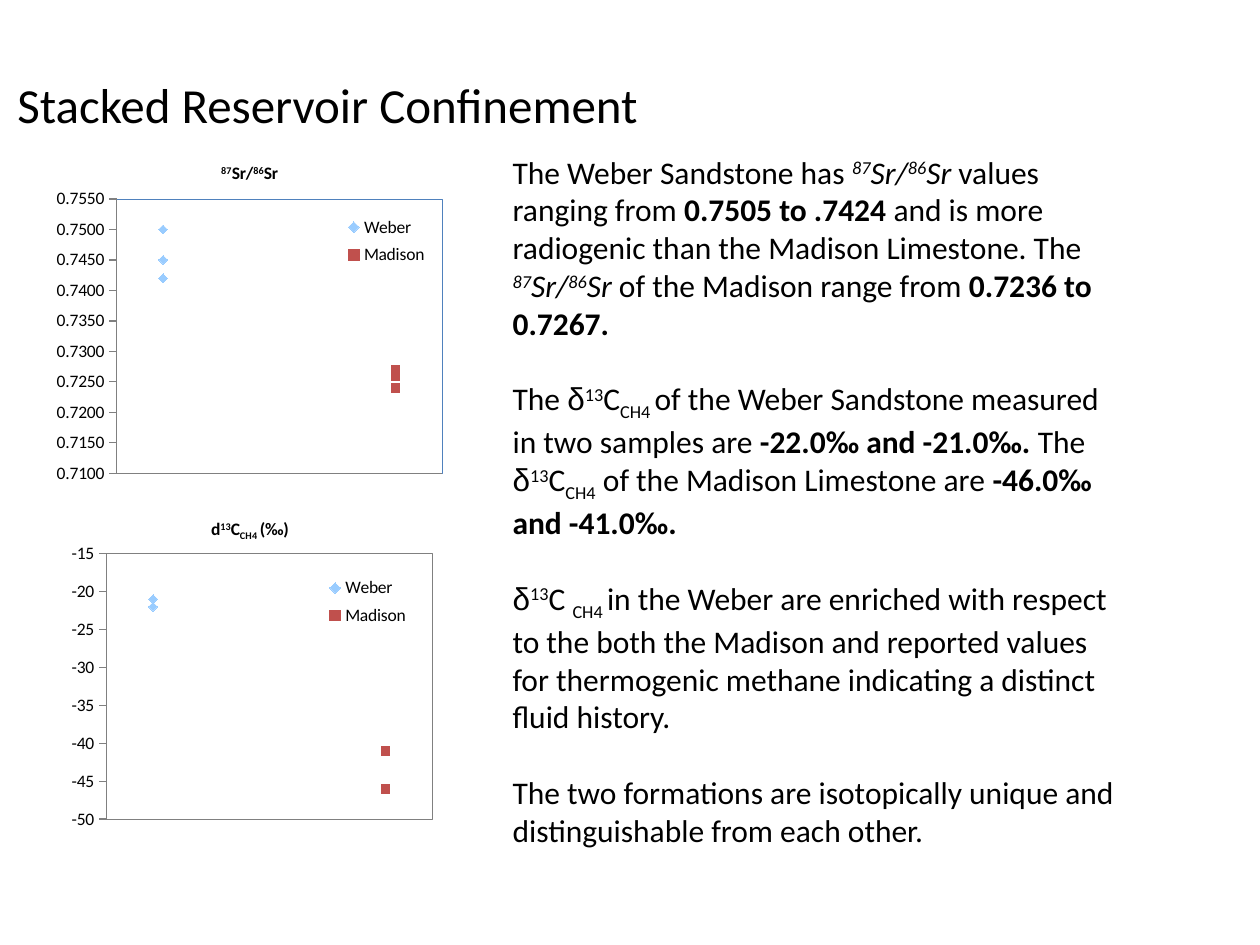
from dataclasses import dataclass

from lxml import etree
from pptx import Presentation
from pptx.chart.data import XyChartData
from pptx.dml.color import RGBColor
from pptx.enum.chart import (XL_CHART_TYPE, XL_LEGEND_POSITION, XL_MARKER_STYLE,
                             XL_TICK_LABEL_POSITION, XL_TICK_MARK)
from pptx.oxml import parse_xml
from pptx.oxml.ns import nsdecls, qn
from pptx.util import Inches, Pt

SCATTER = XL_CHART_TYPE.XY_SCATTER
LEGEND_RIGHT = XL_LEGEND_POSITION.RIGHT
DIAMOND, SQUARE = XL_MARKER_STYLE.DIAMOND, XL_MARKER_STYLE.SQUARE
NO_LABELS = XL_TICK_LABEL_POSITION.NONE
LOW_LABELS = XL_TICK_LABEL_POSITION.LOW
NO_TICK, OUTSIDE_TICK = XL_TICK_MARK.NONE, XL_TICK_MARK.OUTSIDE
WIDTH, HEIGHT = Inches(10), Inches(7.5)


@dataclass(frozen=True)
class Theme:
    font: str = "Calibri"
    greek_font: str = "Arial"
    ink: str = "000000"
    axis: str = "808080"
    blue_frame: str = "4F81BD"
    weber: str = "99CCFF"
    madison: str = "C0504D"
    title_size: int = 28
    body_size: int = 18
    chart_size: int = 10
    paragraph_gap: float = 21.6


THEME = Theme()
SUPER = {"baseline": 30}
SUB = {"baseline": -25}
BOLD = {"bold": True}
ITALIC = {"italic": True}
RATIO = [("87", ITALIC | SUPER), ("Sr/", ITALIC), ("86", ITALIC | SUPER), ("Sr", ITALIC)]
DELTA = [("δ", {"font": THEME.greek_font}), ("13", SUPER)]

BODY = [
    [("The Weber Sandstone has ", {}), *RATIO, (" values ranging from ", {}),
     ("0.7505 to .7424 ", BOLD),
     ("and is more radiogenic than the Madison Limestone. The ", {}), *RATIO,
     (" of the Madison range from ", {}), ("0.7236 to 0.7267.", BOLD)],
    [("The ", {}), *DELTA, ("C", {}), ("CH4 ", SUB),
     ("of the Weber Sandstone measured in two samples are ", {}),
     ("-22.0‰ and -21.0‰. ", BOLD), ("The ", {}), *DELTA, ("C", {}), ("CH4", SUB),
     (" of the Madison Limestone are ", {}), ("-46.0‰ and -41.0‰.", BOLD)],
    [*DELTA, ("C ", {}), ("CH4 ", SUB),
     ("in the Weber are enriched with respect to the both the Madison and reported "
      "values for thermogenic methane indicating a distinct fluid history.", {})],
    [("The two formations are isotopically unique and distinguishable from each other.", {})],
]


def color(value):
    return RGBColor.from_string(value)


def area(left, top, width, height):
    return (round(left * WIDTH), round(top * HEIGHT),
            round(width * WIDTH), round(height * HEIGHT))


def add_span(para, text, size, font=THEME.font, bold=False, italic=False, baseline=0):
    span = para.add_run()
    span.text = text
    span.font.name, span.font.size = font, Pt(size)
    span.font.bold, span.font.italic = bold, italic
    span.font.color.rgb = color(THEME.ink)
    if baseline:
        span._r.get_or_add_rPr().set("baseline", str(baseline * 1000))


def add_text(page, place, paragraphs, size, gap=0):
    frame = page.shapes.add_textbox(*place).text_frame
    frame.word_wrap = True
    for index, spans in enumerate(paragraphs):
        para = frame.add_paragraph() if index else frame.paragraphs[0]
        if index:
            para.space_before = Pt(gap)
        for text, style in spans:
            add_span(para, text, size, **style)


def set_layout(element, index, inner=False, **shares):
    old = element.find(qn("c:layout"))
    if old is not None:
        element.remove(old)
    layout = parse_xml(f"<c:layout {nsdecls('c')}><c:manualLayout/></c:layout>")
    settings = {"layoutTarget": "inner"} if inner else {}
    settings |= {"xMode": "edge", "yMode": "edge"} | shares
    for name, value in settings.items():
        etree.SubElement(layout[0], qn(f"c:{name}")).set("val", str(value))
    element.insert(index, layout)


def style_axis(axis, low, high, tick, labels):
    axis.minimum_scale, axis.maximum_scale = low, high
    axis.has_major_gridlines = False
    axis.major_tick_mark, axis.minor_tick_mark = tick, NO_TICK
    axis.tick_label_position = labels
    axis.format.line.color.rgb = color(THEME.axis)


def style_series(series, marker, fill):
    series.format.line.fill.background()
    series.marker.style, series.marker.size = marker, 5
    series.marker.format.fill.solid()
    series.marker.format.fill.fore_color.rgb = color(fill)
    series.marker.format.line.fill.background()


def add_scatter(page, place, title, weber, madison, scale, number_format, frame, legend_at):
    data = XyChartData(number_format=number_format)
    for name, position, values in (("Weber", 1, weber), ("Madison", 2, madison)):
        series = data.add_series(name)
        for value in values:
            series.add_data_point(position, value)
    chart = page.shapes.add_chart(SCATTER, *place, data).chart
    chart.font.name, chart.font.size = THEME.font, Pt(THEME.chart_size)
    chart.font.color.rgb = color(THEME.ink)
    chart.plots[0].vary_by_categories = False
    for series, marker, fill in zip(chart.plots[0].series, (DIAMOND, SQUARE),
                                    (THEME.weber, THEME.madison)):
        series.smooth = False
        style_series(series, marker, fill)

    low, high, step = scale
    style_axis(chart.category_axis, 0.8, 2.2, NO_TICK, NO_LABELS)
    style_axis(chart.value_axis, low, high, OUTSIDE_TICK, LOW_LABELS)
    chart.value_axis.major_unit = step
    chart.value_axis.tick_labels.number_format = number_format
    chart.value_axis.tick_labels.number_format_is_linked = False

    para = chart.chart_title.text_frame.paragraphs[0]
    for text, style in title:
        add_span(para, text, THEME.chart_size, bold=True, **style)
    set_layout(chart.chart_title._element, 1, x=0.347, y=0.028)

    chart.has_legend = True
    chart.legend.position = LEGEND_RIGHT
    chart.legend.include_in_layout = False
    legend_left, legend_top = legend_at
    set_layout(chart.legend._element, 1, x=legend_left, y=legend_top, w=0.17, h=0.18)

    plot_area = chart._chartSpace.chart.plotArea
    set_layout(plot_area, 0, inner=True, x=0.159, y=0.145, w=0.608, h=0.77)
    plot_area.append(parse_xml(
        f'<c:spPr {nsdecls("c", "a")}><a:noFill/><a:ln w="3175"><a:solidFill>'
        f'<a:srgbClr val="{frame}"/></a:solidFill></a:ln></c:spPr>'))


def main():
    deck = Presentation()
    deck.slide_width, deck.slide_height = WIDTH, HEIGHT
    page = deck.slides.add_slide(deck.slide_layouts[6])
    add_text(page, area(0.004, 0.072, 0.597, 0.083),
             [[("Stacked Reservoir Confinement", {})]], THEME.title_size)
    add_scatter(page, area(0.017, 0.533, 0.425, 0.365),
                [("d", {}), ("13", SUPER), ("C", {}), ("CH4 ", SUB), ("(‰)", {})],
                (-22, -21), (-46, -41), (-50, -15, 5), "#,##0", THEME.axis, (0.562, 0.194))
    add_scatter(page, area(0.025, 0.156, 0.425, 0.377),
                [("87", SUPER), ("Sr/", {}), ("86", SUPER), ("Sr", {})],
                (0.75, 0.742, 0.745), (0.727, 0.724, 0.726),
                (0.71, 0.755, 0.005), "#,##0.0000", THEME.blue_frame, (0.578, 0.173))
    add_text(page, area(0.397, 0.155, 0.5, 0.74), BODY, THEME.body_size,
             gap=THEME.paragraph_gap)
    deck.save("out.pptx")


if __name__ == "__main__":
    main()
